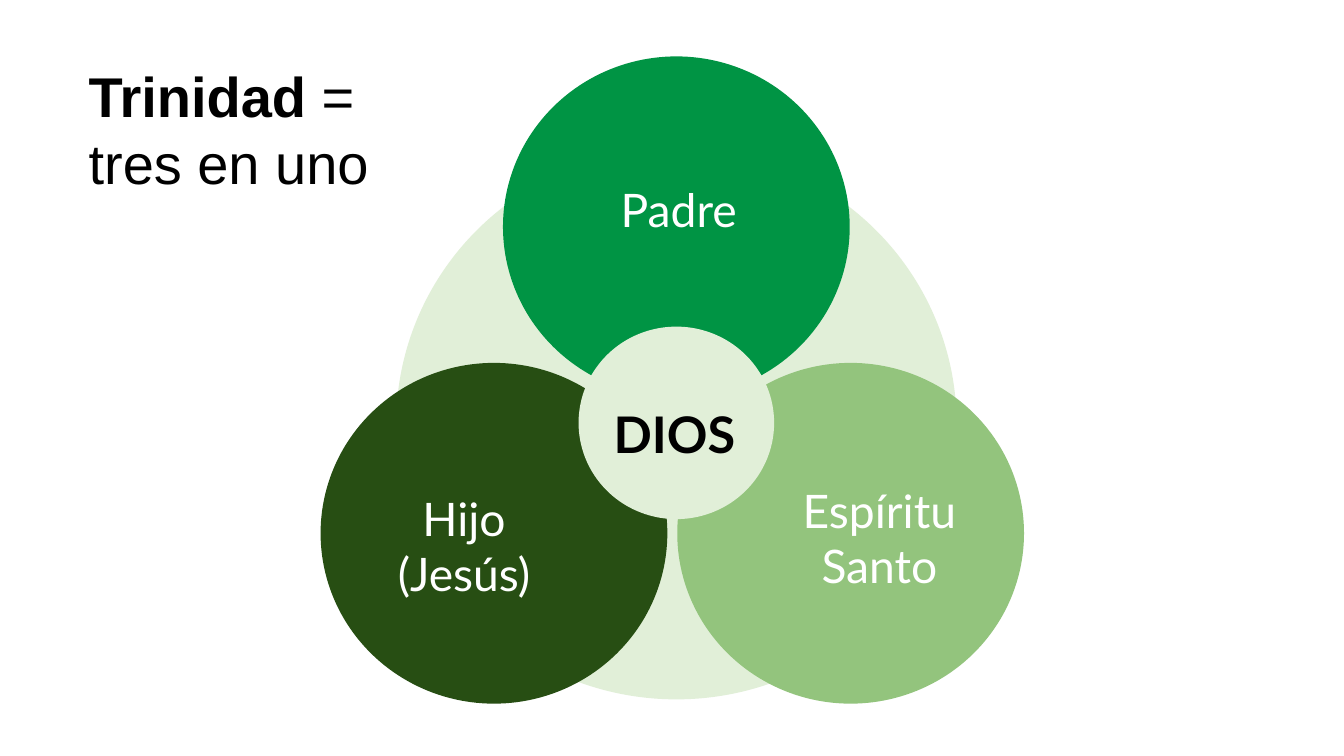
from pptx import Presentation
from pptx.dml.color import RGBColor
from pptx.enum.shapes import MSO_SHAPE
from pptx.enum.text import MSO_ANCHOR, MSO_AUTO_SIZE, PP_ALIGN
from pptx.util import Pt

WHITE = RGBColor(0xFF, 0xFF, 0xFF)
BLACK = RGBColor(0x00, 0x00, 0x00)
PALE_GREEN = RGBColor(0xE1, 0xEF, 0xD8)
GREEN = RGBColor(0x00, 0x94, 0x44)
LIGHT_GREEN = RGBColor(0x93, 0xC4, 0x7D)
DARK_GREEN = RGBColor(0x27, 0x4E, 0x13)

BACKDROP = (283, 105.8, 400.3, 393.8)
CENTER = (413.3, 233.3, 139.7, 137.5)
PERSON_SIZE = (247.7, 243.4)
LABEL_SIZE = (170.6, 79.2)
PERSONS = [
    ("Padre", GREEN, (359.3, 40.3), (399.6, 109.4)),
    ("Espíritu Santo", LIGHT_GREEN, (483.8, 259.2), (542.9, 344.2)),
    ("Hijo (Jesús)", DARK_GREEN, (229, 259.2), (246.2, 349.9)),
]
CENTER_TEXT = ((431.3, 280.8, 103, 72.7), 7.2, [("DIOS", True)], "Lato", 36)
TITLE = ((56.2, 40.3, 226.8, 104.4), None,
         [("Trinidad ", True), ("= tres en uno", False)], "Arial", 40)


def add_filled(shapes, kind, box, color):
    shape = shapes.add_shape(kind, *map(Pt, box))
    shape.shadow.inherit = False
    shape.fill.solid()
    shape.fill.fore_color.rgb = color
    shape.line.fill.background()
    return shape


def set_margins(frame, margin):
    frame.margin_left = frame.margin_right = Pt(margin)
    frame.margin_top = frame.margin_bottom = Pt(margin)


def add_run(paragraph, text, font_name, size, color, bold=False):
    run = paragraph.add_run()
    run.text = text
    run.font.name = font_name
    run.font.size = Pt(size)
    run.font.color.rgb = color
    run.font.bold = bold


def add_person(slide, name, color, circle_corner, label_corner):
    group = slide.shapes.add_group_shape()
    add_filled(group.shapes, MSO_SHAPE.OVAL, circle_corner + PERSON_SIZE, color)
    label = add_filled(group.shapes, MSO_SHAPE.RECTANGLE, label_corner + LABEL_SIZE, color)
    frame = label.text_frame
    frame.word_wrap = True
    frame.vertical_anchor = MSO_ANCHOR.MIDDLE
    set_margins(frame, 9.6)
    paragraph = frame.paragraphs[0]
    paragraph.alignment = PP_ALIGN.CENTER
    add_run(paragraph, name, "Lato", 33, WHITE)


def add_text(slide, box, margin, runs, font_name, size):
    frame = slide.shapes.add_textbox(*map(Pt, box)).text_frame
    frame.word_wrap = True
    if margin is None:
        frame.auto_size = MSO_AUTO_SIZE.SHAPE_TO_FIT_TEXT
    else:
        set_margins(frame, margin)
    for text, bold in runs:
        add_run(frame.paragraphs[0], text, font_name, size, BLACK, bold)


def main():
    presentation = Presentation()
    presentation.slide_width = Pt(960)
    presentation.slide_height = Pt(540)
    slide = presentation.slides.add_slide(presentation.slide_layouts[6])
    slide.background.fill.solid()
    slide.background.fill.fore_color.rgb = WHITE
    add_filled(slide.shapes, MSO_SHAPE.OVAL, BACKDROP, PALE_GREEN)
    for person in PERSONS:
        add_person(slide, *person)
    add_filled(slide.shapes, MSO_SHAPE.OVAL, CENTER, PALE_GREEN)
    for text_box in (CENTER_TEXT, TITLE):
        add_text(slide, *text_box)
    presentation.save("out.pptx")


if __name__ == "__main__":
    main()
